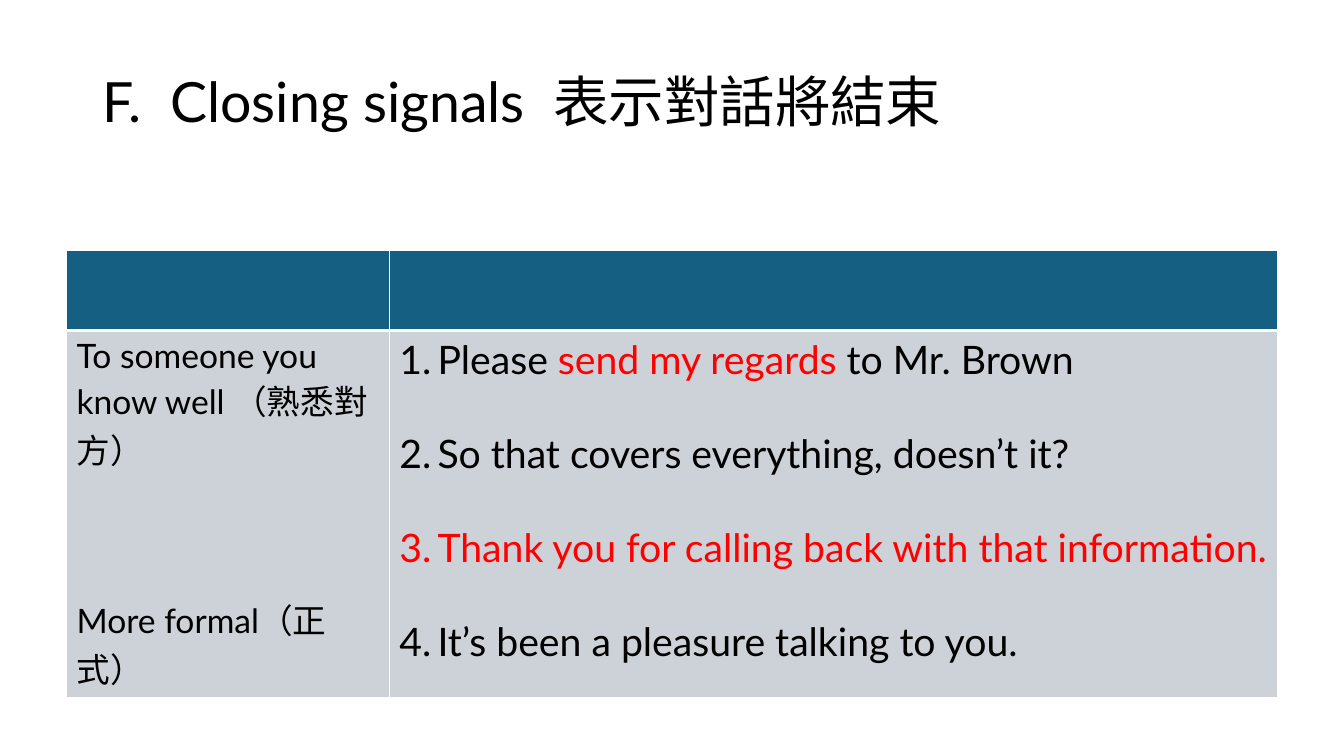
from lxml import etree
from pptx import Presentation
from pptx.dml.color import RGBColor
from pptx.enum import text
from pptx.oxml import ns
from pptx.util import Inches, Pt

FONT = "Lato"
COLORS = {
    "ink": "000000",
    "accent": "FF0000",
    "header": "156082",
    "body": "CCD2D8",
    "border": "FFFFFF",
}
COLUMN_WIDTHS = (3.2, 8.81)
ROW_HEIGHTS = (0.8, 3.64)
TITLE = "F.  Closing signals  表示對話將結束"
AUDIENCES = ["To someone you know well （熟悉對方）", "More formal（正式）"]
CLOSINGS = [
    [("Please ", "ink"), ("send my regards ", "accent"), ("to Mr. Brown", "ink")],
    [("So that covers everything, doesn’t it?", "ink")],
    [("Thank you for calling back with that information.", "accent")],
    [("It’s been a pleasure talking to you.", "ink")],
]


def color(name):
    return RGBColor.from_string(COLORS[name])


def add_paragraph(frame, index, runs, size, gap=0):
    paragraph = frame.paragraphs[0] if index == 0 else frame.add_paragraph()
    paragraph.font.size = Pt(size)
    paragraph.font.name = FONT
    paragraph.space_after = Pt(gap)
    for words, color_name in runs:
        run = paragraph.add_run()
        run.text = words
        run.font.size = Pt(size)
        run.font.name = FONT
        run.font.color.rgb = color(color_name)
    return paragraph


def add_title(slide):
    box = slide.shapes.add_textbox(Inches(0.92), Inches(0.4), Inches(11.5), Inches(1.45))
    frame = box.text_frame
    frame.word_wrap = True
    frame.vertical_anchor = text.MSO_ANCHOR.MIDDLE
    frame.margin_bottom = Inches(0.22)
    paragraph = add_paragraph(frame, 0, [(TITLE, "ink")], 39.6)
    paragraph.line_spacing = 0.9


def number_paragraph(paragraph):
    properties = paragraph._p.get_or_add_pPr()
    properties.set("marL", str(Inches(0.38)))
    properties.set("indent", str(-Inches(0.38)))
    bullet = etree.SubElement(properties, ns.qn("a:buAutoNum"), type="arabicPeriod")
    defaults = properties.find(ns.qn("a:defRPr"))
    if defaults is not None:
        defaults.addprevious(bullet)


def style_cell(cell, fill, top_width, bottom_width):
    properties = cell._tc.get_or_add_tcPr()
    widths = {"lnL": 1, "lnR": 1, "lnT": top_width, "lnB": bottom_width}
    for side, width in widths.items():
        line = etree.SubElement(properties, ns.qn(f"a:{side}"), w=str(Pt(width)))
        solid = etree.SubElement(line, ns.qn("a:solidFill"))
        etree.SubElement(solid, ns.qn("a:srgbClr"), val=COLORS["border"])
    cell.fill.solid()
    cell.fill.fore_color.rgb = color(fill)


def add_signals_table(slide):
    frame = slide.shapes.add_table(
        len(ROW_HEIGHTS),
        len(COLUMN_WIDTHS),
        Inches(0.66),
        Inches(2.48),
        Inches(sum(COLUMN_WIDTHS)),
        Inches(sum(ROW_HEIGHTS)),
    )
    table = frame.table
    for column, width in zip(table.columns, COLUMN_WIDTHS):
        column.width = Inches(width)
    row_styles = (("header", 1, 3), ("body", 3, 1))
    for row, height, style in zip(table.rows, ROW_HEIGHTS, row_styles):
        row.height = Inches(height)
        for cell in row.cells:
            style_cell(cell, *style)

    audience_frame = table.cell(1, 0).text_frame
    for index, audience in enumerate(AUDIENCES):
        gap = 86.4 if index < len(AUDIENCES) - 1 else 0
        add_paragraph(audience_frame, index, [(audience, "ink")], 24, gap)

    closing_frame = table.cell(1, 1).text_frame
    for index, runs in enumerate(CLOSINGS):
        gap = 33.6 if index < len(CLOSINGS) - 1 else 0
        number_paragraph(add_paragraph(closing_frame, index, runs, 28, gap))


def main():
    presentation = Presentation()
    presentation.slide_width = Inches(13.33)
    presentation.slide_height = Inches(7.5)
    slide = presentation.slides.add_slide(presentation.slide_layouts[6])
    add_title(slide)
    add_signals_table(slide)
    presentation.save("out.pptx")


if __name__ == "__main__":
    main()
